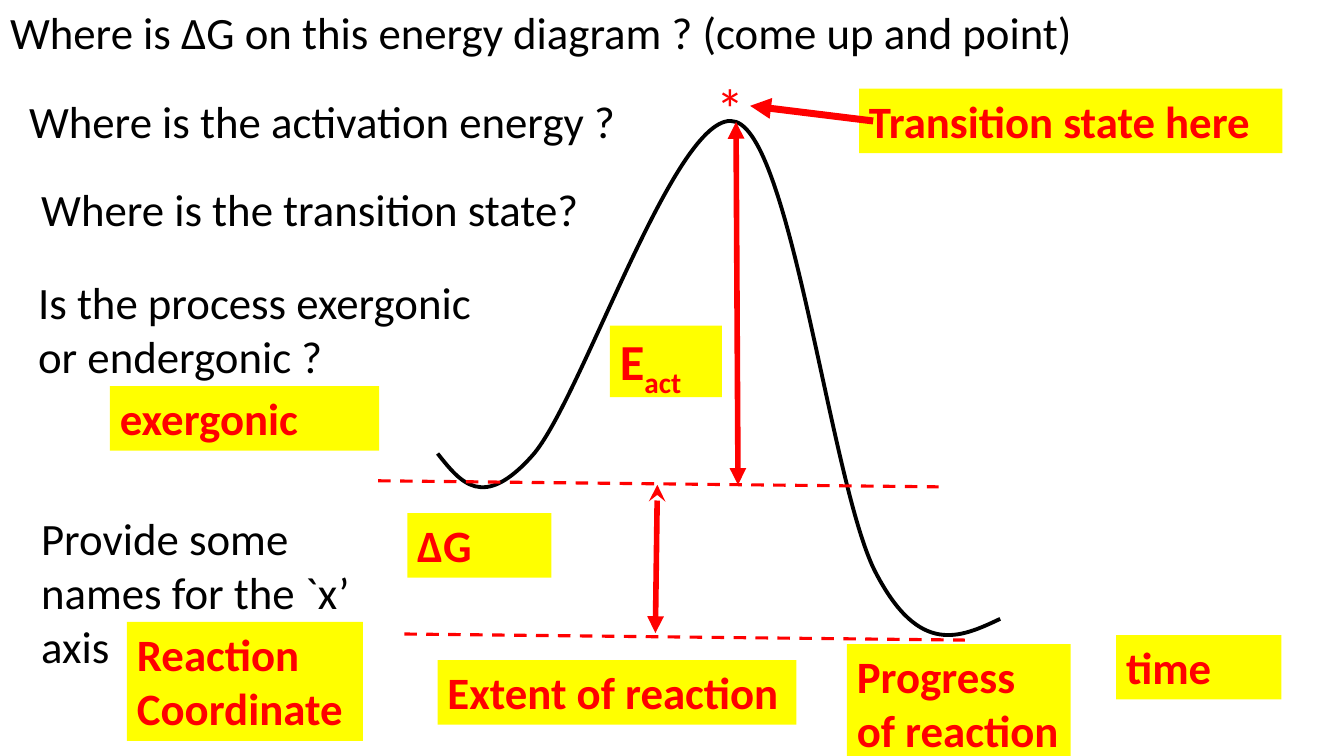
from lxml import etree
from pptx import Presentation
from pptx.dml.color import RGBColor
from pptx.enum.dml import MSO_LINE
from pptx.enum.shapes import MSO_CONNECTOR
from pptx.enum.text import MSO_ANCHOR, MSO_AUTO_SIZE, PP_ALIGN
from pptx.oxml.ns import qn
from pptx.util import Pt

STRAIGHT = MSO_CONNECTOR.STRAIGHT
DASH = MSO_LINE.DASH
TOP = MSO_ANCHOR.TOP
GROW = MSO_AUTO_SIZE.SHAPE_TO_FIT_TEXT
LEFT = PP_ALIGN.LEFT

PX = 9144  # EMU per px, 100 px to the inch
TITLE_ONLY = 5
COLORS = {"ink": "000000", "answer": "FF0000", "highlight": "FFFF00"}

QUESTION = {"size": Pt(32), "name": "Calibri", "bold": False}
ANSWER = {**QUESTION, "bold": True}
ENERGY_SYMBOL = {**ANSWER, "size": Pt(36)}
STAR = {**QUESTION, "size": Pt(40)}

TITLE = "Where is ΔG on this energy diagram ? (come up and point)"

# Left, top, width, height, wording
QUESTIONS = [
    (19, 88, 617, 64, "Where is the activation energy ?"),
    (31, 175, 555, 64, "Where is the transition state?"),
    (28, 268, 484, 118, "Is the process exergonic or endergonic ?"),
    (31, 502, 353, 172, "Provide some names for the `x’ axis"),
]
ANSWERS = [
    (404, 509, 143, 64, "ΔG"),
    (852, 88, 420, 64, "Transition state here"),
    (109, 383, 267, 64, "exergonic"),
    (434, 655, 356, 64, "Extent of reaction"),
    (126, 617, 234, 118, "Reaction Coordinate"),
    (840, 639, 222, 118, "Progress of reaction"),
    (1107, 630, 164, 64, "time"),
]

# Start point, then three Bezier points for each stretch of the curve
ENERGY_CURVE = [
    (434, 450),
    (457, 479), (479, 507), (528, 452),
    (577, 397), (673, 101), (730, 121),
    (786, 140), (825, 487), (869, 569),
    (912, 651), (952, 633), (992, 614),
]

# Start, end, line width, arrowhead at start, arrowhead at end
ARROWS = [
    ((652, 481), (650, 628), 4, "stealth", "triangle"),
    ((730, 121), (732, 481), 4, "triangle", "triangle"),
    ((866, 120), (744, 105), 5, None, "triangle"),
]
ENERGY_LEVELS = [((375, 477), (931, 483)), ((401, 629), (957, 635))]


def emu(*lengths):
    return [length * PX for length in lengths]


def color(name):
    return RGBColor.from_string(COLORS[name])


def add_run(paragraph, text, font_format, color_name):
    run = paragraph.add_run()
    run.text = text
    for attribute, value in font_format.items():
        setattr(run.font, attribute, value)
    run.font.color.rgb = color(color_name)
    return run


def add_title(slide, text):
    title = slide.shapes.title
    title.left, title.top, title.width, title.height = emu(0, 0, 1094, 64)
    frame_format = {"vertical_anchor": TOP, "auto_size": GROW, "word_wrap": True}
    for attribute, value in frame_format.items():
        setattr(title.text_frame, attribute, value)
    paragraph = title.text_frame.paragraphs[0]
    paragraph.alignment = LEFT
    add_run(paragraph, text, QUESTION, "ink")


def add_label(slide, box, text, font_format, color_name, fill=None, wrap=True):
    label = slide.shapes.add_textbox(*emu(*box))
    label.text_frame.word_wrap = wrap
    label.text_frame.auto_size = GROW
    if fill:
        label.fill.solid()
        label.fill.fore_color.rgb = color(fill)
    paragraph = label.text_frame.paragraphs[0]
    add_run(paragraph, text, font_format, color_name)
    return paragraph


def add_line(slide, start, end, width, head=None, tail=None, dash=None):
    connector = slide.shapes.add_connector(STRAIGHT, *emu(*start, *end))
    connector.line.color.rgb = color("answer")
    connector.line.width = Pt(width)
    if dash:
        connector.line.dash_style = dash
    outline = connector.line._get_or_add_ln()
    for tag, arrowhead in (("a:headEnd", head), ("a:tailEnd", tail)):
        if arrowhead:
            etree.SubElement(outline, qn(tag), type=arrowhead)
    etree.SubElement(connector._element.spPr, qn("a:effectLst"))


def add_curve(slide, points, width):
    builder = slide.shapes.build_freeform(*points[0], scale=PX)
    builder.add_line_segments(points[1:], close=False)
    curve = builder.convert_to_shape()
    curve.shadow.inherit = False
    curve.fill.background()
    curve.line.color.rgb = color("ink")
    curve.line.width = Pt(width)
    # Join every three straight segments into one Bezier stretch
    segments = list(curve._element.iter(qn("a:lnTo")))
    for first in range(0, len(segments), 3):
        bezier = etree.Element(qn("a:cubicBezTo"))
        segments[first].addprevious(bezier)
        for segment in segments[first:first + 3]:
            bezier.append(segment[0])
            segment.getparent().remove(segment)


def main():
    prs = Presentation()
    prs.slide_width, prs.slide_height = emu(1333, 750)
    slide = prs.slides.add_slide(prs.slide_layouts[TITLE_ONLY])

    # Energy diagram
    add_curve(slide, ENERGY_CURVE, 2.75)
    add_title(slide, TITLE)
    for start, end in ENERGY_LEVELS:
        add_line(slide, start, end, 2.25, dash=DASH)

    # Questions and highlighted answers
    for *box, text in QUESTIONS:
        add_label(slide, box, text, QUESTION, "ink")
    for *box, text in ANSWERS:
        add_label(slide, box, text, ANSWER, "answer", "highlight")

    # Activation energy with its subscript
    activation = add_label(slide, (605, 323, 111, 71), "E", ENERGY_SYMBOL,
                           "answer", "highlight")
    subscript = add_run(activation, "act", ENERGY_SYMBOL, "answer")
    subscript._r.get_or_add_rPr().set("baseline", "-25000")

    # Arrows and transition state mark
    for start, end, width, head, tail in ARROWS:
        add_line(slide, start, end, width, head, tail)
    add_label(slide, (701, 68, 48, 77), "*", STAR, "answer", wrap=False)

    prs.save("out.pptx")


if __name__ == "__main__":
    main()
